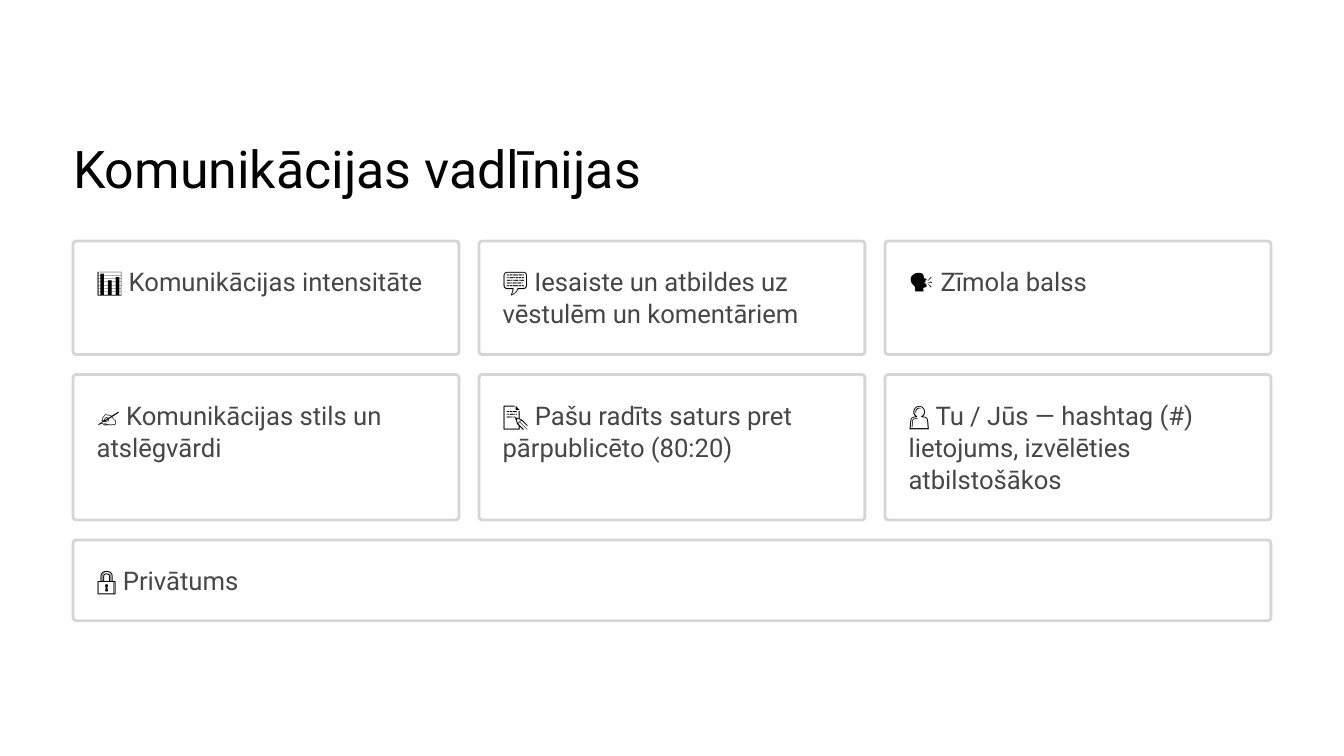
from pptx import Presentation
from pptx.dml.color import RGBColor
from pptx.enum.shapes import MSO_SHAPE
from pptx.enum.text import MSO_ANCHOR, MSO_AUTO_SIZE, PP_ALIGN
from pptx.util import Inches, Pt

ROUNDED = MSO_SHAPE.ROUNDED_RECTANGLE
TOP = MSO_ANCHOR.TOP
LEFT = PP_ALIGN.LEFT
NO_FIT = MSO_AUTO_SIZE.NONE

TITLE = "Komunikācijas vadlīnijas"
ROWS = [
    (1.35, [
        ("📊", "Komunikācijas intensitāte"),
        ("💬", "Iesaiste un atbildes uz vēstulēm un komentāriem"),
        ("🗣️", "Zīmola balss"),
    ]),
    (1.73, [
        ("✍️", "Komunikācijas stils un atslēgvārdi"),
        ("📝", "Pašu radīts saturs pret pārpublicēto (80:20)"),
        ("👤", "Tu / Jūs — hashtag (#) lietojums, izvēlēties atbilstošākos"),
    ]),
    (0.96, [("🔒", "Privātums")]),
]

WIDTH, HEIGHT = 16, 9
MARGIN, GAP, PAD = 0.87, 0.24, 0.28
GRID_TOP = 2.87
CORNER = 0.037
CONTENT_WIDTH = WIDTH - 2 * MARGIN


def color(value):
    return RGBColor.from_string(value)


def box(*lengths):
    return [Inches(v) for v in lengths]


def write(shape, runs, size, spacing):
    tf = shape.text_frame
    frame_format = {
        "word_wrap": True, "auto_size": NO_FIT, "vertical_anchor": TOP,
        "margin_left": 0, "margin_top": 0, "margin_right": 0, "margin_bottom": 0,
    }
    for name, value in frame_format.items():
        setattr(tf, name, value)
    p = tf.paragraphs[0]
    p.alignment = LEFT
    p.line_spacing = Pt(spacing)
    for text, shade in runs:
        r = p.add_run()
        r.text = text
        for name, value in {"name": "Roboto", "size": Pt(size)}.items():
            setattr(r.font, name, value)
        r.font.color.rgb = color(shade)


def add_card(s, x, y, w, h, icon, label):
    card = s.shapes.add_shape(ROUNDED, *box(x, y, w, h))
    card.adjustments[0] = CORNER / h
    card.shadow.inherit = False
    card.fill.solid()
    card.fill.fore_color.rgb = color("FFFFFF")
    card.line.color.rgb = color("D8D4D4")
    card.line.width = Pt(2.4)
    caption = s.shapes.add_textbox(*box(x + PAD, y + PAD, w - 2 * PAD, h - 2 * PAD))
    write(caption, [(icon, "000000"), (" " + label, "464646")], 22, 27.5)


def main():
    prs = Presentation()
    prs.slide_width, prs.slide_height = box(WIDTH, HEIGHT)
    s = prs.slides.add_slide(prs.slide_layouts[5])
    s.background.fill.solid()
    s.background.fill.fore_color.rgb = color("FFFFFF")

    title = s.shapes.title
    title.left, title.top, title.width, title.height = box(MARGIN, 1.6, 7.23, 0.78)
    write(title, [(TITLE, "030303")], 44.5, 55.5)

    y = GRID_TOP
    for h, cards in ROWS:
        w = (CONTENT_WIDTH - GAP * (len(cards) - 1)) / len(cards)
        for column, (icon, label) in enumerate(cards):
            add_card(s, MARGIN + column * (w + GAP), y, w, h, icon, label)
        y += h + GAP

    prs.save("out.pptx")


if __name__ == "__main__":
    main()
